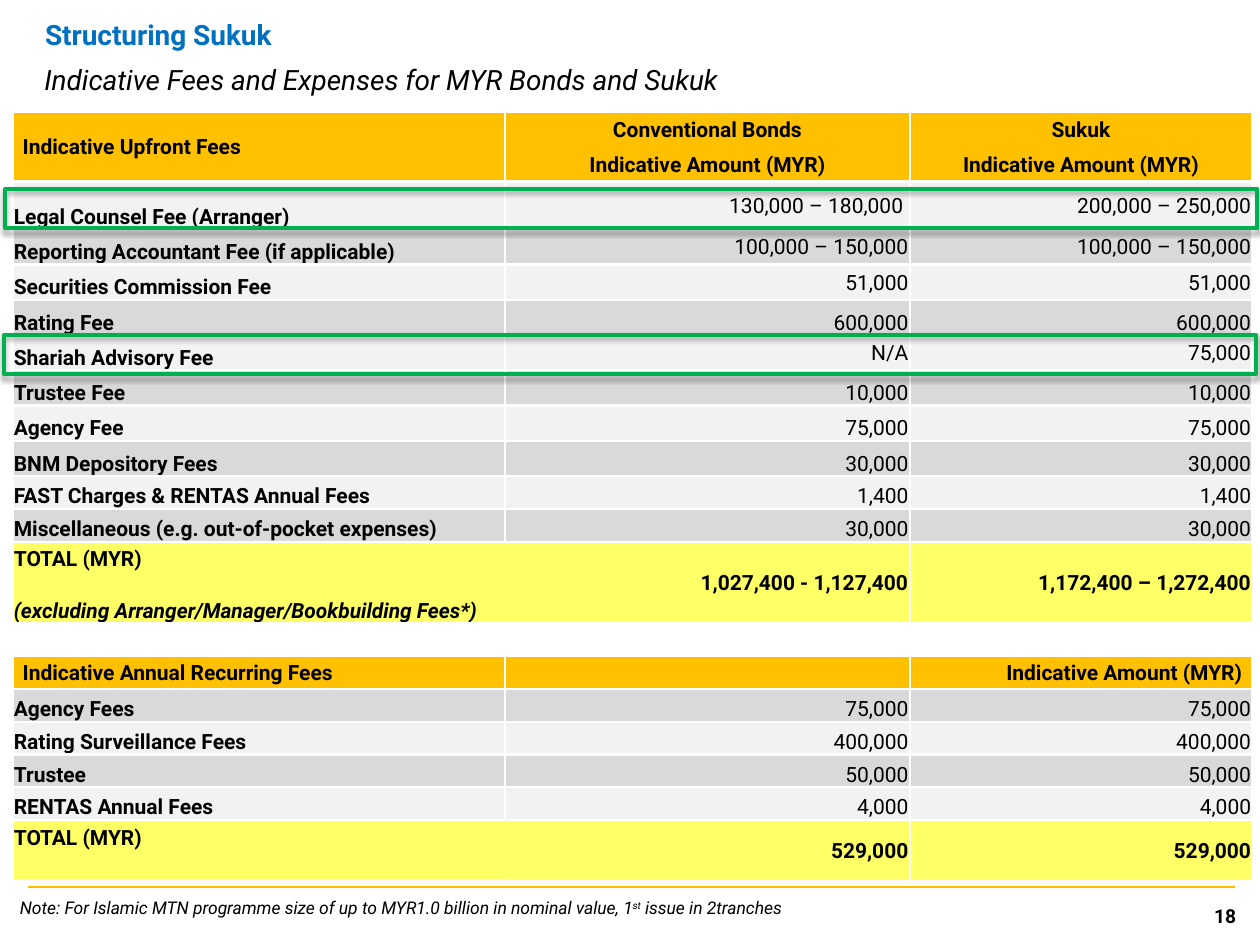
"""Build the slide of indicative fees and expenses for MYR bonds and sukuk."""
from lxml.etree import SubElement
from pptx import Presentation
from pptx.dml.color import RGBColor
from pptx.enum.shapes import MSO_CONNECTOR, MSO_SHAPE
from pptx.enum.text import MSO_ANCHOR, PP_ALIGN
from pptx.oxml.ns import qn
from pptx.util import Inches, Pt

FONT = "Roboto"
COLORS = {
    "title": "0070C0", "text": "000000", "header": "FFC000", "light": "F2F2F2",
    "dark": "D9D9D9", "total": "FFFF66", "highlight": "00B050",
    "border": "FFFFFF", "rule": "FFBC00",
}
TITLE = "Structuring Sukuk"
SUBTITLE = " Indicative Fees and Expenses for MYR Bonds and Sukuk"
NOTE = [
    "Note: For Islamic MTN programme size of up to MYR1.0 billion in nominal value, 1",
    "st", " issue in 2tranches",
]
PAGE = "18"
AMOUNT = "Indicative Amount (MYR)"
FEES = [
    ("header", 0.28, "Indicative Upfront Fees", "Conventional Bonds", "Sukuk"),
    ("header", 0.27, "", AMOUNT, AMOUNT),
    ("light", 0.38, "Legal Counsel Fee (Arranger)", " 130,000 – 180,000 ", "200,000 – 250,000"),
    ("dark", 0.28, "Reporting Accountant Fee (if applicable)", "100,000 – 150,000", "100,000 – 150,000"),
    ("light", 0.28, "Securities Commission Fee", "51,000", "51,000"),
    ("dark", 0.28, "Rating Fee", "600,000", "600,000"),
    ("light", 0.28, "Shariah Advisory Fee", "N/A", "75,000"),
    ("dark", 0.28, "Trustee Fee", "10,000", "10,000"),
    ("light", 0.28, "Agency Fee", "75,000", "75,000"),
    ("dark", 0.28, "BNM Depository Fees", "30,000", "30,000"),
    ("light", 0.26, "FAST Charges & RENTAS Annual Fees", "1,400", "1,400"),
    ("dark", 0.26, "Miscellaneous (e.g. out-of-pocket expenses)", "30,000", "30,000"),
    ("total", 0.24, "TOTAL (MYR)", "1,027,400 - 1,127,400", "1,172,400 – 1,272,400"),
    ("total", 0.41, "(excluding Arranger/Manager/Bookbuilding Fees*)", "", ""),
    ("gap", 0.26, "", "", ""),
    ("header", 0.26, "Indicative Annual Recurring Fees", "", AMOUNT),
    ("dark", 0.26, "Agency Fees", "75,000", "75,000"),
    ("light", 0.26, "Rating Surveillance Fees", "400,000", "400,000"),
    ("dark", 0.26, "Trustee", "50,000", "50,000"),
    ("light", 0.26, "RENTAS Annual Fees", "4,000", "4,000"),
    ("total", 0.24, "TOTAL (MYR)", "529,000", "529,000"),
    ("total", 0.24, "", "", ""),
]
COLUMNS = [3.91, 3.21, 2.72]
MIDDLE_ROWS = {2, 3, 4, 6}
PAIRED_ROWS = {0: [0], 12: [1, 2], 20: [1, 2]}
HIGHLIGHTS = [(0.03, 2.66), (0.04, 1.5)]


def color(name):
    return RGBColor.from_string(COLORS[name])


def style(run, size, bold=False, italic=False, tint="text"):
    font = run.font
    font.name, font.size, font.bold, font.italic = FONT, Pt(size), bold, italic
    font.color.rgb = color(tint)


def add_text(slide, place, parts, size, align=PP_ALIGN.LEFT, **look):
    box = slide.shapes.add_textbox(*map(Inches, place))
    box.text_frame.word_wrap = True
    paragraph = box.text_frame.paragraphs[0]
    paragraph.alignment = align
    for part in parts:
        run = paragraph.add_run()
        run.text = part
        style(run, size, **look)
    return box.text_frame


def hidden_edges(row, col):
    """Return the cell sides left open inside paired header and total rows."""
    kind = FEES[row][0]
    above = row > 0 and FEES[row - 1][0] == kind
    below = row + 1 < len(FEES) and FEES[row + 1][0] == kind
    edges = {"T"} if above else {"B"} if below else set()
    if kind == "total" and col < 2:
        edges.add("R" if col == 0 else "L")
    return edges


def draw_borders(cell, hidden):
    properties = cell._tc.get_or_add_tcPr()
    for side in "LRTB":
        line = SubElement(properties, qn(f"a:ln{side}"), w=str(Pt(1.5)))
        if side in hidden:
            SubElement(line, qn("a:noFill"))
        else:
            fill = SubElement(line, qn("a:solidFill"))
            SubElement(fill, qn("a:srgbClr"), val=COLORS["border"])


def fill_cell(cell, row, col):
    kind, text = FEES[row][0], FEES[row][2 + col]
    header, total = kind == "header", kind == "total"
    single_header = header and row > 1
    draw_borders(cell, hidden_edges(row, col))
    if kind == "gap":
        cell.fill.background()
    else:
        cell.fill.solid()
        cell.fill.fore_color.rgb = color(kind)
    cell.margin_left = Inches(0.08 if header and col == 0 else 0.01)
    cell.margin_right = Inches(0.08 if single_header and col == 2 else 0.01)
    cell.margin_top, cell.margin_bottom = Inches(0.01), 0
    centred = header or col and (total or row in MIDDLE_ROWS)
    cell.vertical_anchor = MSO_ANCHOR.MIDDLE if centred else MSO_ANCHOR.BOTTOM
    paragraph = cell.text_frame.paragraphs[0]
    if not text:
        SubElement(paragraph._p, qn("a:endParaRPr"), sz="1200")
        return
    paragraph.text = text
    if col:
        paragraph.alignment = PP_ALIGN.CENTER if row < 2 else PP_ALIGN.RIGHT
    style(paragraph.runs[0], 12, bold=header or total or col == 0, italic=text.startswith("("))


def add_fees(slide):
    height = sum(fee[1] for fee in FEES)
    table = slide.shapes.add_table(
        len(FEES), len(COLUMNS), Inches(0.1), Inches(0.89),
        Inches(sum(COLUMNS)), Inches(height)).table
    table.first_row = table.horz_banding = False
    for col, width in enumerate(COLUMNS):
        table.columns[col].width = Inches(width)
    for row, fee in enumerate(FEES):
        table.rows[row].height = Inches(fee[1])
        for col in range(len(COLUMNS)):
            fill_cell(table.cell(row, col), row, col)
    for row, cols in PAIRED_ROWS.items():
        for col in cols:
            table.cell(row, col).merge(table.cell(row + 1, col))


def add_highlight(slide, left, top):
    frame = slide.shapes.add_shape(
        MSO_SHAPE.RECTANGLE, Inches(left), Inches(top), Inches(9.94), Inches(0.31))
    frame.fill.background()
    frame.line.color.rgb, frame.line.width = color("highlight"), Pt(2.25)
    frame.shadow.inherit = False
    effects = frame._element.spPr.find(qn("a:effectLst"))
    shadow = SubElement(effects, qn("a:outerShdw"), blurRad=str(Pt(3.1)),
                        dist=str(Pt(1.8)), dir="5400000", rotWithShape="0")
    tint = SubElement(shadow, qn("a:srgbClr"), val=COLORS["text"])
    SubElement(tint, qn("a:alpha"), val="35000")


def main():
    deck = Presentation()
    deck.slide_width, deck.slide_height = Inches(10), Inches(7.5)
    slide = deck.slides.add_slide(deck.slide_layouts[6])

    rule = slide.shapes.add_connector(
        MSO_CONNECTOR.STRAIGHT, Inches(0.22), Inches(7.04), Inches(9.8), Inches(7.04))
    rule.line.color.rgb, rule.line.width = color("rule"), Pt(1.5)
    SubElement(rule._element.spPr, qn("a:effectLst"))

    note = add_text(slide, (0.06, 7.07, 9.24, 0.27), NOTE, 10, italic=True)
    note.paragraphs[0].runs[1].font._element.set("baseline", "30000")
    add_text(slide, (0.2, 0.45, 7.57, 0.37), [SUBTITLE], 16, PP_ALIGN.JUSTIFY, italic=True)
    add_fees(slide)
    for left, top in HIGHLIGHTS:
        add_highlight(slide, left, top)
    page = add_text(slide, (7.58, 7.07, 2.33, 0.4), [PAGE], 11, PP_ALIGN.RIGHT, bold=True)
    page.vertical_anchor = MSO_ANCHOR.MIDDLE
    add_text(slide, (0.26, 0.09, 8.76, 0.51), [TITLE], 16, bold=True, tint="title")
    deck.save("out.pptx")


if __name__ == "__main__":
    main()
